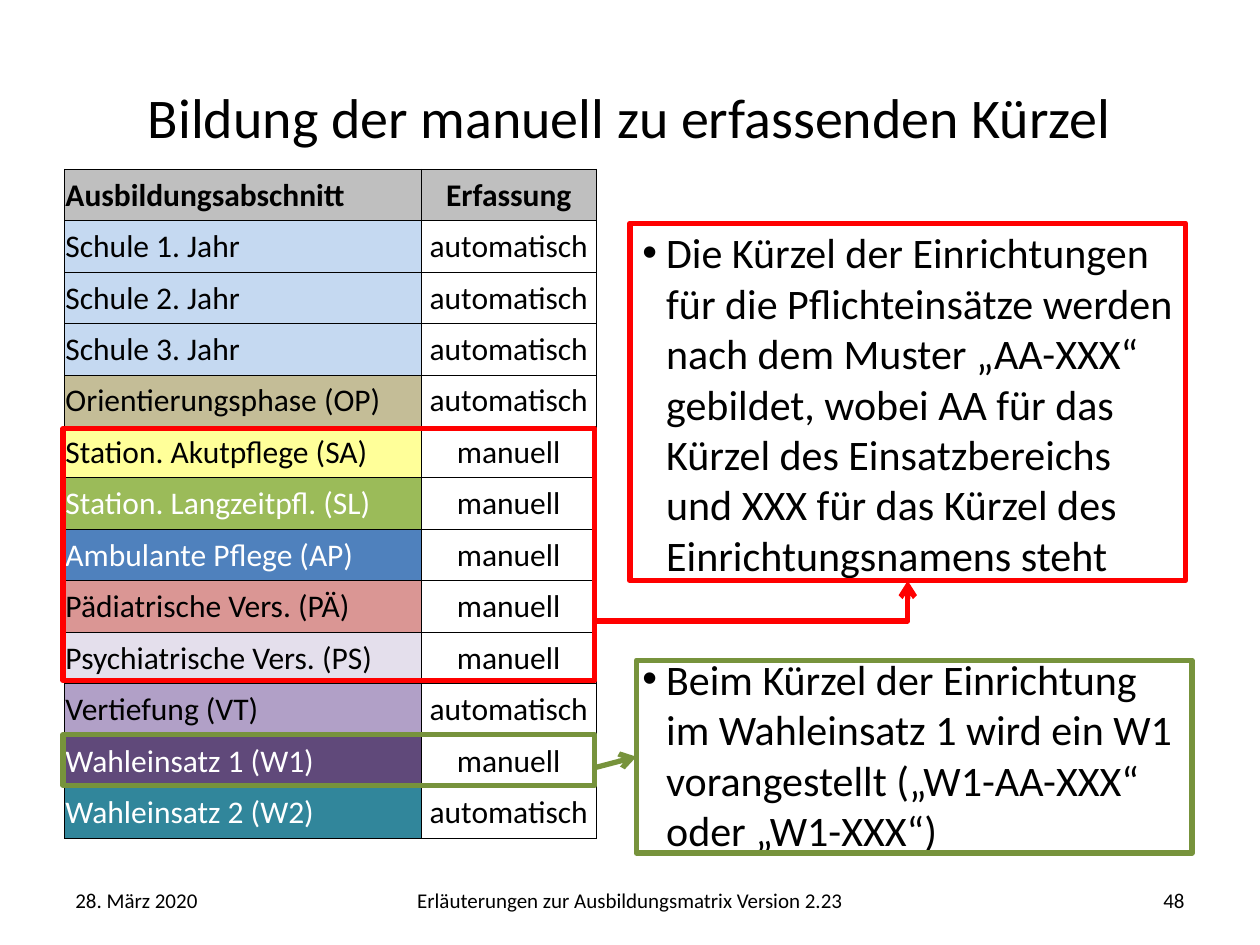
from lxml.etree import SubElement
from pptx import Presentation
from pptx.dml.color import RGBColor
from pptx.enum.shapes import MSO_CONNECTOR, MSO_SHAPE
from pptx.enum.text import MSO_ANCHOR, PP_ALIGN
from pptx.oxml.ns import qn
from pptx.util import Cm, Pt

BLACK = RGBColor(0x00, 0x00, 0x00)
WHITE = RGBColor(0xFF, 0xFF, 0xFF)
RED = RGBColor(0xFF, 0x00, 0x00)
GREEN = RGBColor(0x77, 0x93, 0x3C)
GREY = RGBColor(0xBF, 0xBF, 0xBF)
LIGHT_BLUE = RGBColor(0xC5, 0xD9, 0xF1)
TAN = RGBColor(0xC4, 0xBD, 0x97)
YELLOW = RGBColor(0xFF, 0xFF, 0x99)
LEAF = RGBColor(0x9B, 0xBB, 0x59)
BLUE = RGBColor(0x4F, 0x81, 0xBD)
ROSE = RGBColor(0xDA, 0x96, 0x94)
LAVENDER = RGBColor(0xE4, 0xDF, 0xEC)
LILAC = RGBColor(0xB1, 0xA0, 0xC7)
PURPLE = RGBColor(0x60, 0x49, 0x7A)
TEAL = RGBColor(0x31, 0x86, 0x9B)


def format_paragraph(paragraph, size, color=BLACK, bold=False, alignment=PP_ALIGN.LEFT):
    paragraph.alignment = alignment
    for run in paragraph.runs:
        run.font.name = "Calibri"
        run.font.size = Pt(size)
        run.font.bold = bold
        run.font.color.rgb = color


presentation = Presentation()
presentation.slide_width = Cm(25.4)
presentation.slide_height = Cm(19.05)
slide = presentation.slides.add_slide(presentation.slide_layouts[6])

sections = [
    ("Ausbildungsabschnitt", "Erfassung", GREY, BLACK),
    ("Schule 1. Jahr", "automatisch", LIGHT_BLUE, BLACK),
    ("Schule 2. Jahr", "automatisch", LIGHT_BLUE, BLACK),
    ("Schule 3. Jahr", "automatisch", LIGHT_BLUE, BLACK),
    ("Orientierungsphase (OP)", "automatisch", TAN, BLACK),
    ("Station. Akutpflege (SA)", "manuell", YELLOW, BLACK),
    ("Station. Langzeitpfl. (SL)", "manuell", LEAF, WHITE),
    ("Ambulante Pflege (AP)", "manuell", BLUE, WHITE),
    ("Pädiatrische Vers. (PÄ)", "manuell", ROSE, BLACK),
    ("Psychiatrische Vers. (PS)", "manuell", LAVENDER, BLACK),
    ("Vertiefung (VT)", "automatisch", LILAC, BLACK),
    ("Wahleinsatz 1 (W1)", "manuell", PURPLE, WHITE),
    ("Wahleinsatz 2 (W2)", "automatisch", TEAL, WHITE),
]
table = slide.shapes.add_table(
    len(sections), 2, Cm(1.3), Cm(3.41), Cm(10.72), Cm(13.49)
).table
table.first_row = False
table.horz_banding = False
table.columns[0].width = Cm(7.19)
table.columns[1].width = Cm(3.53)
for row_index, (section, entry, fill_color, text_color) in enumerate(sections):
    table.rows[row_index].height = Cm(13.49) // len(sections)
    is_header = row_index == 0
    for column_index, text in enumerate((section, entry)):
        cell = table.cell(row_index, column_index)
        cell.text_frame.text = text
        cell.vertical_anchor = MSO_ANCHOR.MIDDLE
        cell.margin_left = cell.margin_right = cell.margin_top = Cm(0.02)
        cell.margin_bottom = 0
        is_name = column_index == 0
        format_paragraph(
            cell.text_frame.paragraphs[0], 18, text_color if is_name else BLACK,
            is_header, PP_ALIGN.LEFT if is_name else PP_ALIGN.CENTER,
        )
        cell_properties = cell._tc.get_or_add_tcPr()
        for side in ("a:lnL", "a:lnR", "a:lnT", "a:lnB"):
            border = SubElement(cell_properties, qn(side), w=str(Pt(0.5)))
            border_fill = SubElement(border, qn("a:solidFill"))
            SubElement(border_fill, qn("a:srgbClr"), val=str(BLACK))
        if is_name or is_header:
            cell.fill.solid()
            cell.fill.fore_color.rgb = fill_color
        else:
            cell.fill.background()

captions = [
    ("Bildung der manuell zu erfassenden Kürzel", 1.27, 0.76, 22.86, 3.18, 32, PP_ALIGN.CENTER),
    ("28. März 2020", 1.27, 17.65, 5.93, 1.01, 12, PP_ALIGN.LEFT),
    ("Erläuterungen zur Ausbildungsmatrix Version 2.23", 6.5, 17.65, 12.4, 1.01, 12, PP_ALIGN.CENTER),
    ("48", 18.2, 17.65, 5.93, 1.01, 12, PP_ALIGN.RIGHT),
]
for text, left, top, width, height, size, alignment in captions:
    caption = slide.shapes.add_textbox(Cm(left), Cm(top), Cm(width), Cm(height))
    caption.text_frame.word_wrap = True
    caption.text_frame.vertical_anchor = MSO_ANCHOR.MIDDLE
    caption.text_frame.text = text
    format_paragraph(caption.text_frame.paragraphs[0], size, alignment=alignment)

explanation = slide.shapes.add_textbox(Cm(12.7), Cm(4.45), Cm(11.43), Cm(12.57))
explanation.text_frame.word_wrap = True
explanation.text_frame.text = (
    "Die Kürzel der Einrichtungen für die Pflichteinsätze werden nach dem Muster "
    "„AA-XXX“ gebildet, wobei AA für das Kürzel des Einsatzbereichs und XXX für "
    "das Kürzel des Einrichtungsnamens steht\n"
    "Beim Kürzel der Einrichtung im Wahleinsatz 1 wird ein W1 vorangestellt "
    "(„W1-AA-XXX“ oder „W1-XXX“)"
)
for paragraph, space in zip(explanation.text_frame.paragraphs, (12, 42)):
    format_paragraph(paragraph, 24)
    paragraph.space_before = Pt(space)
    properties = paragraph._p.get_or_add_pPr()
    properties.set("marL", str(Cm(0.48)))
    properties.set("indent", str(-Cm(0.48)))
    SubElement(properties, qn("a:buFont"), typeface="Arial")
    SubElement(properties, qn("a:buChar"), char="•")

frames = []
for left, top, width, height, color in [
    (1.27, 8.64, 10.72, 5.08, RED),
    (12.7, 4.5, 11.2, 7.21, RED),
    (12.83, 13.31, 11.2, 3.89, GREEN),
    (1.27, 14.81, 10.72, 1.02, GREEN),
]:
    frame = slide.shapes.add_shape(
        MSO_SHAPE.RECTANGLE, Cm(left), Cm(top), Cm(width), Cm(height)
    )
    frame.shadow.inherit = False
    frame.fill.background()
    frame.line.color.rgb = color
    frame.line.width = Pt(3)
    frames.append(frame)

elective_arrow = slide.shapes.add_connector(
    MSO_CONNECTOR.STRAIGHT, Cm(12.01), Cm(15.47), Cm(12.83), Cm(15.26)
)
elective_arrow.end_connect(frames[2], 1)
mandatory_arrow = slide.shapes.add_connector(
    MSO_CONNECTOR.ELBOW, Cm(12.01), Cm(12.52), Cm(18.3), Cm(11.71)
)
mandatory_arrow._element.spPr.find(qn("a:prstGeom")).set("prst", "bentConnector2")
for arrow, color in ((elective_arrow, GREEN), (mandatory_arrow, RED)):
    arrow.line.color.rgb = color
    arrow.line.width = Pt(3)
    SubElement(arrow.line._get_or_add_ln(), qn("a:tailEnd"), type="arrow")
    SubElement(arrow._element.spPr, qn("a:effectLst"))

presentation.save("out.pptx")
